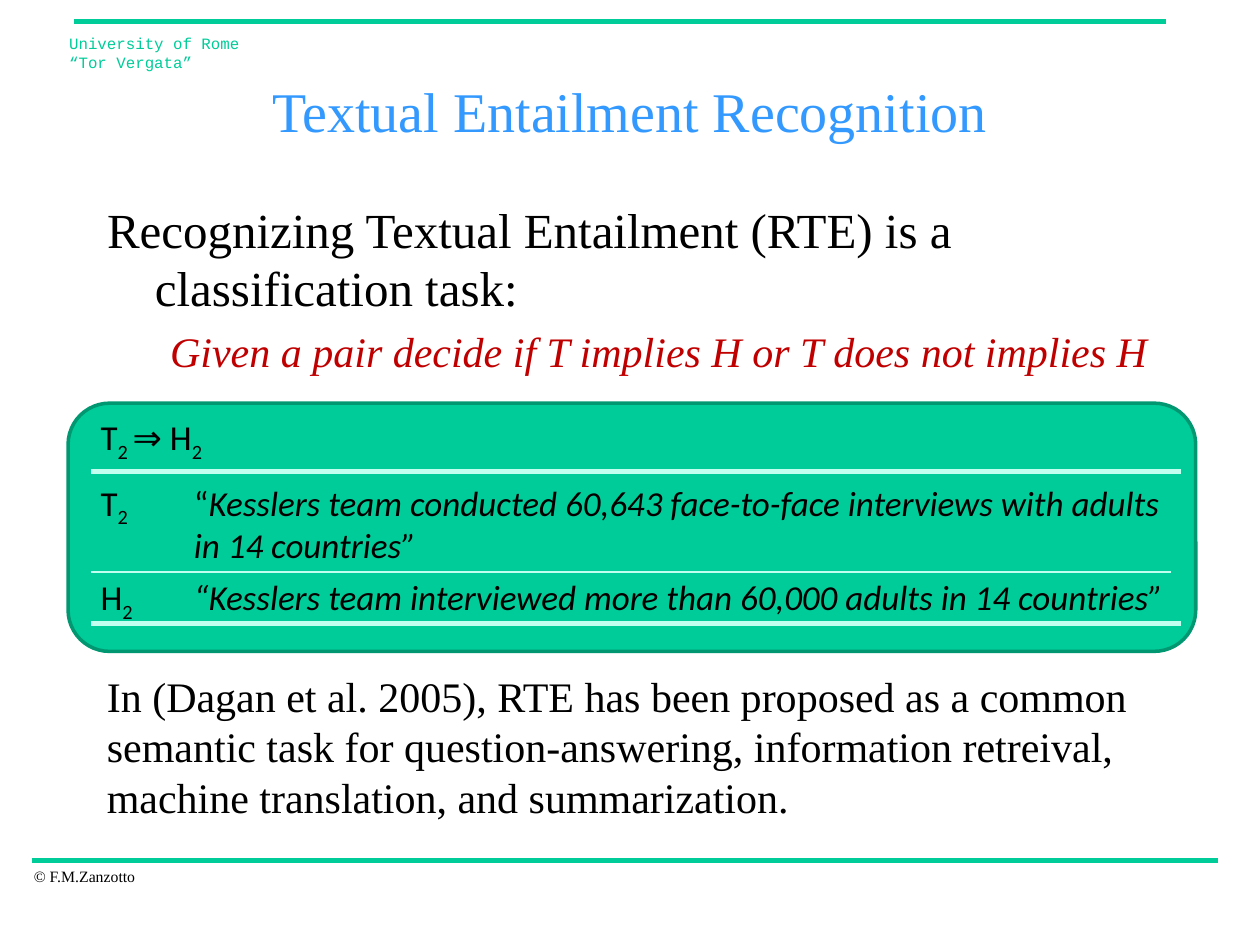
from lxml.etree import SubElement
from pptx import Presentation
from pptx.dml.color import RGBColor
from pptx.enum.shapes import MSO_CONNECTOR, MSO_SHAPE
from pptx.enum.text import MSO_ANCHOR, MSO_AUTO_SIZE, PP_ALIGN
from pptx.oxml.ns import qn
from pptx.util import Inches, Pt

THEME = {
    "green": "00CC99", "dark_green": "009771", "mint": "C2FFF0",
    "blue": "3399FF", "red": "C00000", "black": "000000",
    "serif": "Times New Roman", "sans": "Calibri", "mono": "Courier New",
    "title": 32, "lead": 28, "body": 24, "example": 20, "small": 9,
}

# Content: a run is (text, style), style holding "i" for italic, "s" for subscript
TITLE = "Textual Entailment Recognition"
AFFILIATION = ["University of Rome", "“Tor Vergata”"]
COPYRIGHT = "© F.M.Zanzotto"
BODY = [  # text, level, size, colour, italic, left margin, first-line indent, space before
    ("Recognizing Textual Entailment (RTE) is a classification task:",
     0, "lead", "black", False, 0.38, -0.38, 0),
    ("Given a pair decide if T implies H or T does not implies H",
     1, "body", "red", True, 0.81, -0.31, 4.8),
]
CLOSING = ("In (Dagan et al. 2005), RTE has been proposed as a common semantic task for "
           "question-answering, information retreival, machine translation, and summarization.")
LABEL_LEFT, QUOTE_LEFT = 0.7, 1.44
EXAMPLE = [  # left, top, width, height, wrap, runs
    (LABEL_LEFT, 3.25, 1.09, 0.44, False,
     [("T", ""), ("2 ", "s"), ("⇒ H", ""), ("2", "s")]),
    (LABEL_LEFT, 3.77, 0.43, 0.44, False, [("T", ""), ("2", "s")]),
    (QUOTE_LEFT, 3.77, 7.99, 0.78, True,
     [("“", ""), ("Kesslers team conducted 60,643 face-to-face interviews "
                  "with adults in 14 countries”", "i")]),
    (LABEL_LEFT, 4.52, 0.47, 0.44, False, [("H", ""), ("2", "s")]),
    (QUOTE_LEFT, 4.52, 7.95, 0.44, False,
     [("“Kesslers team interviewed more than 60,000 adults in 14 countries”", "i")]),
]
FRAME_RULES = [(0.59, 9.25, 0.17, "green", 3), (0.25, 9.67, 6.83, "green", 3)]
EXAMPLE_RULES = [(0.72, 9.37, 3.74, "mint", 3), (0.72, 9.29, 4.54, "mint", 0.75),
                 (0.72, 9.37, 4.95, "mint", 3)]


def color(name):
    return RGBColor.from_string(THEME[name])


def add_run(paragraph, text, font, size, fill, style=""):
    run = paragraph.add_run()
    run.text = text
    run.font.name = THEME[font]
    run.font.size = Pt(THEME[size])
    run.font.color.rgb = color(fill)
    run.font.italic = "i" in style
    if "s" in style:
        run.font._element.set("baseline", "-25000")


def place(shape, left, top, width, height):
    shape.left, shape.top = Inches(left), Inches(top)
    shape.width, shape.height = Inches(width), Inches(height)


def add_text(slide, left, top, width, height, wrap=False):
    box = slide.shapes.add_textbox(Inches(left), Inches(top), Inches(width), Inches(height))
    box.text_frame.word_wrap = wrap
    return box.text_frame.paragraphs[0]


def add_rules(slide, rules):
    for start, end, y, fill, weight in rules:
        rule = slide.shapes.add_connector(
            MSO_CONNECTOR.STRAIGHT, Inches(start), Inches(y), Inches(end), Inches(y))
        rule.line.color.rgb = color(fill)
        rule.line.width = Pt(weight)
        SubElement(rule._element.spPr, qn("a:effectLst"))


def add_frame(slide):
    add_rules(slide, FRAME_RULES)
    add_run(add_text(slide, 0.17, 6.83, 1.02, 0.25), COPYRIGHT, "serif", "small", "black")
    paragraph = add_text(slide, 0.45, 0.22, 1.71, 0.4)
    for index, line in enumerate(AFFILIATION):
        if index:
            paragraph.add_line_break()
        add_run(paragraph, line, "mono", "small", "green")


def fill_title(title):
    place(title, 0.75, 0.5, 8.5, 0.75)
    frame = title.text_frame
    frame.auto_size = MSO_AUTO_SIZE.NONE
    frame.vertical_anchor = MSO_ANCHOR.MIDDLE
    frame.paragraphs[0].alignment = PP_ALIGN.CENTER
    add_run(frame.paragraphs[0], TITLE, "serif", "title", "blue")


def fill_body(body):
    place(body, 0.75, 1.53, 8.86, 1.54)
    frame = body.text_frame
    frame.auto_size = MSO_AUTO_SIZE.NONE
    for index, (text, level, size, fill, italic, margin, indent, before) in enumerate(BODY):
        paragraph = frame.add_paragraph() if index else frame.paragraphs[0]
        paragraph.level = level
        paragraph.space_before = Pt(before)
        properties = paragraph._p.get_or_add_pPr()
        properties.set("marL", str(Inches(margin)))
        properties.set("indent", str(Inches(indent)))
        SubElement(properties, qn("a:buNone"))
        add_run(paragraph, text, "serif", size, fill, "i" if italic else "")


def add_example(slide):
    panel = slide.shapes.add_shape(
        MSO_SHAPE.ROUNDED_RECTANGLE, Inches(0.54), Inches(3.2), Inches(8.95), Inches(1.97))
    panel.shadow.inherit = False
    panel.fill.solid()
    panel.fill.fore_color.rgb = color("green")
    panel.line.color.rgb = color("dark_green")
    panel.line.width = Pt(2)
    for *box, wrap, runs in EXAMPLE:
        paragraph = add_text(slide, *box, wrap)
        for text, style in runs:
            add_run(paragraph, text, "sans", "example", "black", style)
    add_rules(slide, EXAMPLE_RULES)


def main():
    presentation = Presentation()
    presentation.slide_width, presentation.slide_height = Inches(10), Inches(7.5)
    slide = presentation.slides.add_slide(presentation.slide_layouts[1])
    add_frame(slide)
    fill_title(slide.shapes.title)
    fill_body(slide.placeholders[1])
    add_example(slide)
    closing = add_text(slide, 0.75, 5.27, 8.43, 1.31, True)
    add_run(closing, CLOSING, "serif", "body", "black")
    presentation.save("out.pptx")


if __name__ == "__main__":
    main()
